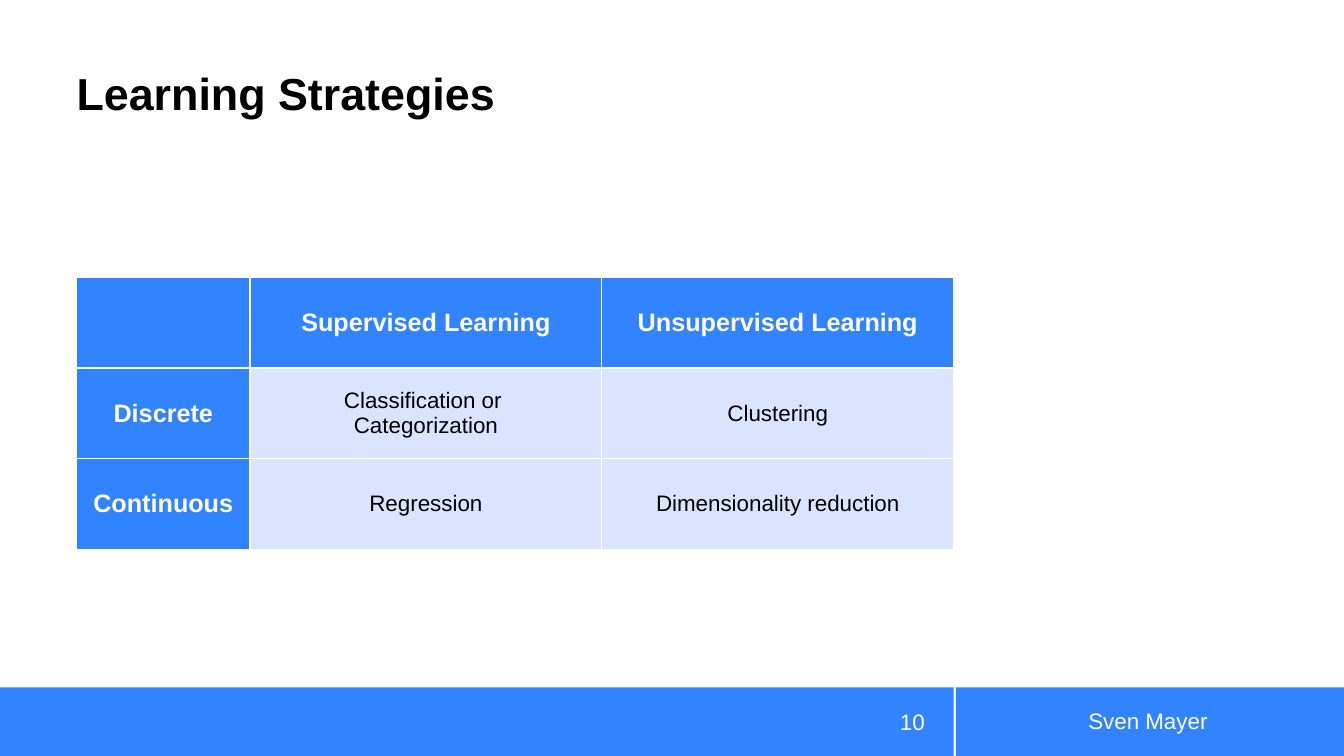
from lxml import etree
from pptx import Presentation
from pptx import util as u
from pptx.dml import color
from pptx.enum import shapes, text
from pptx.oxml import ns

WIDTH, HEIGHT = 13.33, 7.5
LEFT, SPLIT = 0.76, 9.46
BAR_TOP, GAP = 6.82, 0.02
BLUE, PALE, WHITE, BLACK = "3183FF", "D9E5FF", "FFFFFF", "000000"
COLUMNS = (1.72, 3.49, 3.49)
ROW = 0.9
STRATEGIES = (
    ("", "Supervised Learning", "Unsupervised Learning"),
    ("Discrete", "Classification or \vCategorization", "Clustering"),
    ("Continuous", "Regression", "Dimensionality reduction"),
)


def rgb(value):
    """Turn a hex string into a colour."""
    return color.RGBColor.from_string(value)


def inches(*lengths):
    """Convert several lengths from inches."""
    return [u.Inches(length) for length in lengths]


def write(tf, words, size, hue, align, bold=False):
    """Set the words of a text frame and format their runs."""
    tf.text = words
    for p in tf.paragraphs:
        p.alignment = align
        for r in p.runs:
            r.font.name = "Arial"
            r.font.size = u.Pt(size)
            r.font.bold = bold
            r.font.color.rgb = rgb(hue)


def add_bar(s, left, right):
    """Draw one blue part of the footer."""
    sp = s.shapes.add_shape(
        shapes.MSO_SHAPE.RECTANGLE,
        *inches(left, BAR_TOP, right - left, HEIGHT - BAR_TOP))
    sp.shadow.inherit = False
    sp.fill.solid()
    sp.fill.fore_color.rgb = rgb(BLUE)
    sp.line.fill.background()


def add_label(s, box, words, size, hue, align, bold=False):
    """Place a wrapped, vertically centred text box."""
    tf = s.shapes.add_textbox(*inches(*box)).text_frame
    tf.word_wrap = True
    tf.vertical_anchor = text.MSO_ANCHOR.MIDDLE
    write(tf, words, size, hue, align, bold)
    return tf


def add_title(s, words):
    """Place the bold heading at the top of the slide."""
    tf = add_label(s, (LEFT, 0.13, SPLIT - LEFT, 1.06), words, 32, BLACK,
                   text.PP_ALIGN.LEFT, True)
    tf.vertical_anchor = text.MSO_ANCHOR.BOTTOM
    tf.margin_left = tf.margin_right = tf.margin_top = tf.margin_bottom = 0
    tf.paragraphs[0].line_spacing = 0.9


def add_borders(cell):
    """Give a cell thin white lines on all sides."""
    tcPr = cell._tc.get_or_add_tcPr()
    for side in "LRTB":
        ln = etree.SubElement(tcPr, ns.qn(f"a:ln{side}"), w=str(u.Pt(1)))
        fill = etree.SubElement(ln, ns.qn("a:solidFill"))
        etree.SubElement(fill, ns.qn("a:srgbClr"), val=WHITE)


def add_strategy_table(s, rows):
    """Build the table with a header row and a header column."""
    frame = s.shapes.add_table(
        len(rows), len(COLUMNS),
        *inches(LEFT, 2.75, sum(COLUMNS), ROW * len(rows)))
    table = frame.table
    for column, width in zip(table.columns, COLUMNS):
        column.width = u.Inches(width)
    for i, row in enumerate(rows):
        for j, words in enumerate(row):
            header = i == 0 or j == 0
            cell = table.cell(i, j)
            cell.vertical_anchor = text.MSO_ANCHOR.MIDDLE
            add_borders(cell)
            cell.fill.solid()
            cell.fill.fore_color.rgb = rgb(BLUE if header else PALE)
            write(cell.text_frame, words, 18 if header else 16,
                  WHITE if header else BLACK, text.PP_ALIGN.CENTER, header)


def main():
    """Build the slide and save it."""
    prs = Presentation()
    prs.slide_width, prs.slide_height = inches(WIDTH, HEIGHT)
    s = prs.slides.add_slide(prs.slide_layouts[6])
    add_bar(s, 0, SPLIT)
    add_bar(s, SPLIT + GAP, WIDTH)
    add_title(s, "Learning Strategies")
    add_label(s, (9.61, 6.95, 3.55, 0.4), "Sven Mayer", 16, WHITE,
              text.PP_ALIGN.CENTER)
    add_label(s, (8.41, 6.96, 0.86, 0.4), "10", 16, WHITE,
              text.PP_ALIGN.RIGHT)
    add_strategy_table(s, STRATEGIES)
    prs.save("out.pptx")


if __name__ == "__main__":
    main()
